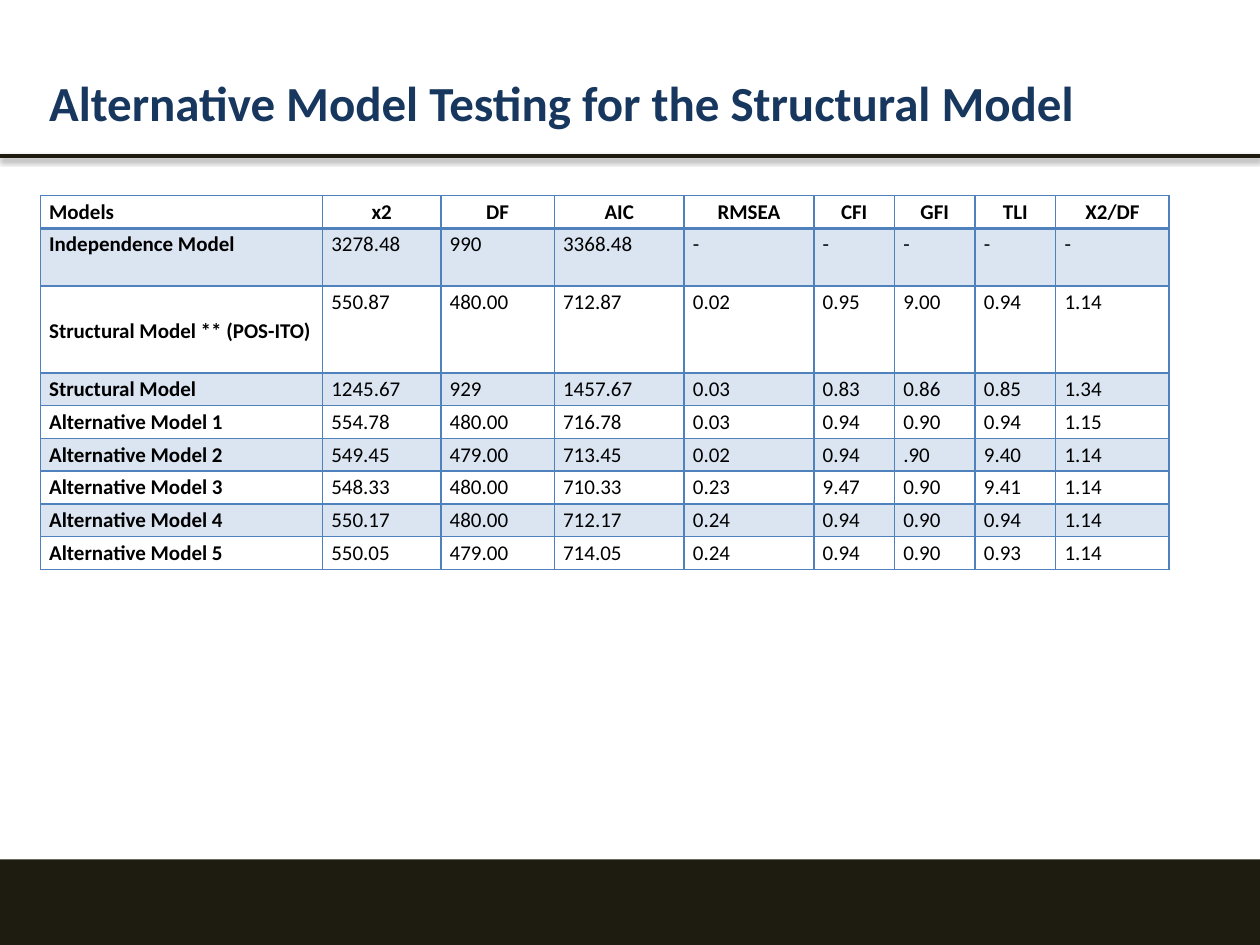
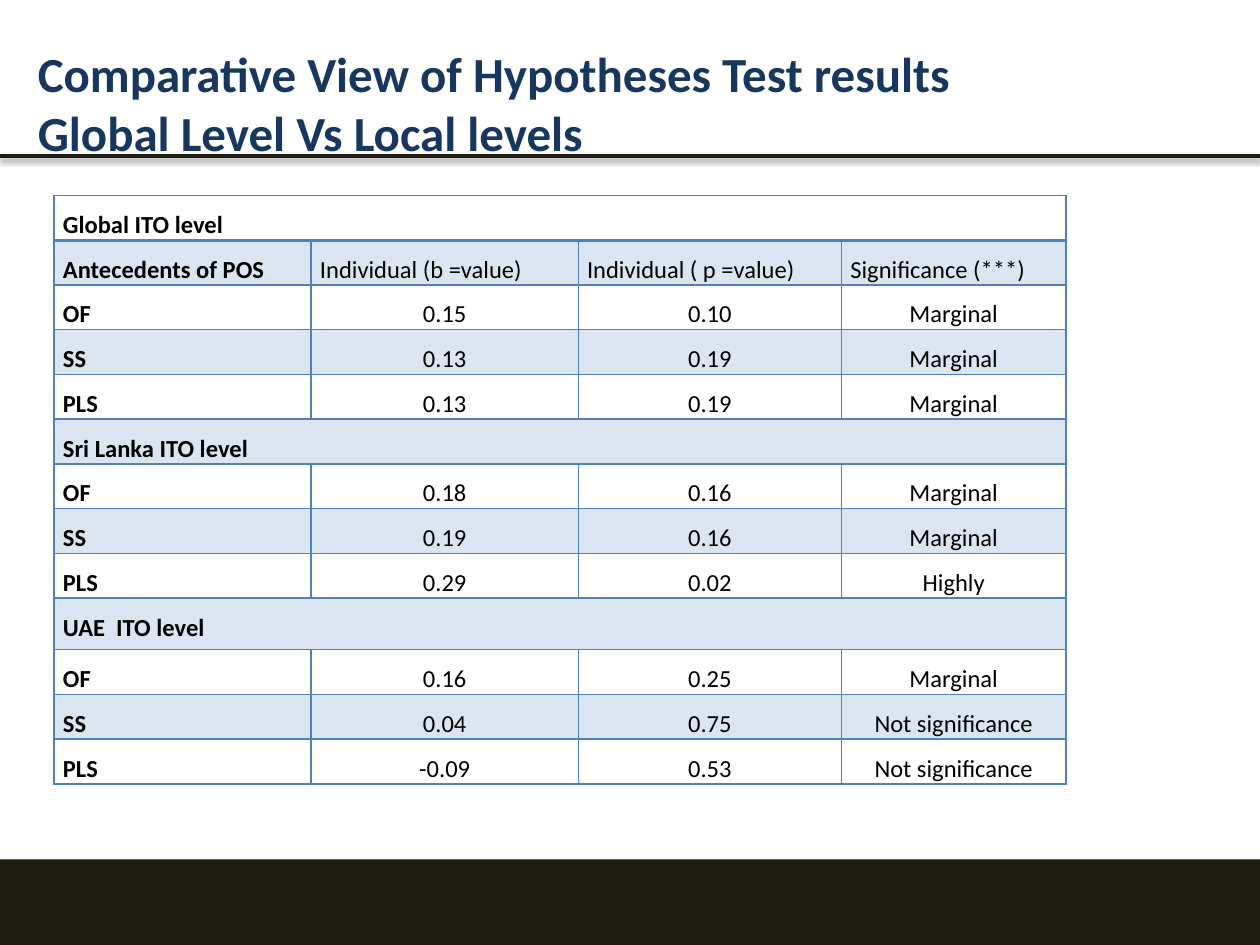
from lxml.etree import SubElement
from pptx import Presentation
from pptx.dml.color import RGBColor
from pptx.enum.shapes import MSO_CONNECTOR, MSO_SHAPE
from pptx.enum.text import MSO_ANCHOR, MSO_AUTO_SIZE, PP_ALIGN
from pptx.oxml.ns import qn
from pptx.util import Inches, Pt

LEFT, CENTER = PP_ALIGN.LEFT, PP_ALIGN.CENTER
TOP, MIDDLE = MSO_ANCHOR.TOP, MSO_ANCHOR.MIDDLE
STRAIGHT, RECTANGLE = MSO_CONNECTOR.STRAIGHT, MSO_SHAPE.RECTANGLE
FIXED = MSO_AUTO_SIZE.NONE

NAVY = RGBColor(0x17, 0x37, 0x5E)
DARK = RGBColor(0x1E, 0x1C, 0x11)
BLUE = RGBColor(0x4F, 0x81, 0xBD)
BLACK = RGBColor(0, 0, 0)
FONT = "Calibri"

WIDTH, HEIGHT = 10, 7.5
RULE_Y, FOOTER_Y, TABLE_Y = 1.24, 6.82, 1.55

MODEL_FIT = [
    ("Models", "x2", "DF", "AIC", "RMSEA", "CFI", "GFI", "TLI", "X2/DF"),
    ("Independence Model", "3278.48", "990", "3368.48", "-", "-", "-", "-", "-"),
    ("Structural Model ** (POS-ITO)", "550.87", "480.00", "712.87", "0.02", "0.95", "9.00", "0.94", "1.14"),
    ("Structural Model", "1245.67", "929", "1457.67", "0.03", "0.83", "0.86", "0.85", "1.34"),
    ("Alternative Model 1", "554.78", "480.00", "716.78", "0.03", "0.94", "0.90", "0.94", "1.15"),
    ("Alternative Model 2", "549.45", "479.00", "713.45", "0.02", "0.94", ".90", "9.40", "1.14"),
    ("Alternative Model 3", "548.33", "480.00", "710.33", "0.23", "9.47", "0.90", "9.41", "1.14"),
    ("Alternative Model 4", "550.17", "480.00", "712.17", "0.24", "0.94", "0.90", "0.94", "1.14"),
    ("Alternative Model 5", "550.05", "479.00", "714.05", "0.24", "0.94", "0.90", "0.93", "1.14"),
]
HYPOTHESES = [
    ("Global ITO level",),
    ("Antecedents of POS", "Individual (b =value)", "Individual ( p =value)", "Significance (***)"),
    ("OF", "0.15", "0.10", "Marginal"),
    ("SS", "0.13", "0.19", "Marginal"),
    ("PLS", "0.13", "0.19", "Marginal"),
    ("Sri Lanka ITO level",),
    ("OF", "0.18", "0.16", "Marginal"),
    ("SS", "0.19", "0.16", "Marginal"),
    ("PLS", "0.29", "0.02", "Highly"),
    ("UAE  ITO level",),
    ("OF", "0.16", "0.25", "Marginal"),
    ("SS", "0.04", "0.75", "Not significance"),
    ("PLS", "-0.09", "0.53", "Not significance"),
]
SLIDES = [
    dict(
        title="Alternative Model Testing for the Structural Model",
        title_box=(0.29, 0.52, 8.54, 0.57),
        rows=MODEL_FIT, left=0.32, size=12, line_spacing=1.15, space_after=0,
        widths=(2.24, 0.94, 0.9, 1.03, 1.03, 0.64, 0.64, 0.64, 0.9),
        row_height=0.26, tall_rows={1: 0.46, 2: 0.69},
        centered_rows={0}, middle_cells={(2, 0)},
    ),
    dict(
        title="Comparative View of Hypotheses Test results\nGlobal Level Vs Local levels",
        title_box=(0.2, 0.29, 9.69, 1.04),
        rows=HYPOTHESES, left=0.43, size=14, line_spacing=1.5, space_after=6,
        widths=(2.04, 2.12, 2.09, 1.78),
        row_height=0.35, tall_rows={9: 0.41},
        centered_rows=set(range(2, len(HYPOTHESES))), middle_cells=set(),
    ),
]


def style_font(paragraph, size, color, bold):
    font = paragraph.font
    font.name, font.size, font.bold = FONT, Pt(size), bold
    font.color.rgb = color


def add_solid(parent, color, alpha=100):
    fill = SubElement(parent, qn("a:solidFill"))
    tone = SubElement(fill, qn("a:srgbClr"), val=str(color))
    if alpha < 100:
        SubElement(tone, qn("a:alpha"), val=str(alpha * 1000))


def add_frame(slide):
    rule = slide.shapes.add_connector(STRAIGHT, 0, Inches(RULE_Y), Inches(WIDTH), Inches(RULE_Y))
    rule.line.color.rgb = DARK
    rule.line.width = Pt(2)
    effects = SubElement(rule.element.spPr, qn("a:effectLst"))
    shadow = SubElement(effects, qn("a:outerShdw"), blurRad=str(Pt(3.1)), dist=str(Pt(1.6)),
                        dir="5400000", rotWithShape="0")
    tone = SubElement(shadow, qn("a:srgbClr"), val=str(BLACK))
    SubElement(tone, qn("a:alpha"), val="38000")

    footer = slide.shapes.add_shape(RECTANGLE, 0, Inches(FOOTER_Y), Inches(WIDTH), Inches(HEIGHT - FOOTER_Y))
    footer.shadow.inherit = False
    footer.fill.solid()
    footer.fill.fore_color.rgb = DARK
    footer.line.fill.background()


def add_title(slide, text, box):
    title = slide.shapes.title
    title.left, title.top, title.width, title.height = map(Inches, box)
    title.element.getparent().append(title.element)
    frame = title.text_frame
    frame.text = text
    frame.auto_size = FIXED
    for paragraph in frame.paragraphs:
        paragraph.alignment = LEFT
        style_font(paragraph, 28, NAVY, True)


def style_cell(cell, row, banded):
    cell.margin_left = cell.margin_right = Inches(0.07)
    cell.margin_top = cell.margin_bottom = 0
    properties = cell._tc.get_or_add_tcPr()
    heavy_side = {0: "lnB", 1: "lnT"}.get(row)
    for side in ("lnL", "lnR", "lnT", "lnB"):
        weight = 2 if side == heavy_side else 1
        add_solid(SubElement(properties, qn(f"a:{side}"), w=str(Pt(weight))), BLUE)
    if banded:
        add_solid(properties, BLUE, 20)
    else:
        SubElement(properties, qn("a:noFill"))


def add_results(slide, content):
    rows, widths = content["rows"], content["widths"]
    heights = [content["tall_rows"].get(r, content["row_height"]) for r in range(len(rows))]
    table = slide.shapes.add_table(
        len(rows), len(widths), Inches(content["left"]), Inches(TABLE_Y),
        Inches(sum(widths)), Inches(sum(heights))).table
    table.first_row = table.horz_banding = False
    for column, width in zip(table.columns, widths):
        column.width = Inches(width)
    for r, values in enumerate(rows):
        table.rows[r].height = Inches(heights[r])
        if len(values) == 1:
            table.cell(r, 0).merge(table.cell(r, len(widths) - 1))
        for c in range(len(widths)):
            cell = table.cell(r, c)
            style_cell(cell, r, r % 2 == 1)
            cell.vertical_anchor = MIDDLE if (r, c) in content["middle_cells"] else TOP
            if c < len(values):
                cell.text = values[c]
            paragraph = cell.text_frame.paragraphs[0]
            paragraph.alignment = CENTER if c and r in content["centered_rows"] else LEFT
            paragraph.line_spacing = content["line_spacing"]
            paragraph.space_after = Pt(content["space_after"])
            style_font(paragraph, content["size"], BLACK, r == 0 or c == 0)


def main():
    deck = Presentation()
    deck.slide_width, deck.slide_height = Inches(WIDTH), Inches(HEIGHT)
    title_only = deck.slide_layouts[5]
    for content in SLIDES:
        slide = deck.slides.add_slide(title_only)
        add_frame(slide)
        add_title(slide, content["title"], content["title_box"])
        add_results(slide, content)
    deck.save("out.pptx")


if __name__ == "__main__":
    main()
